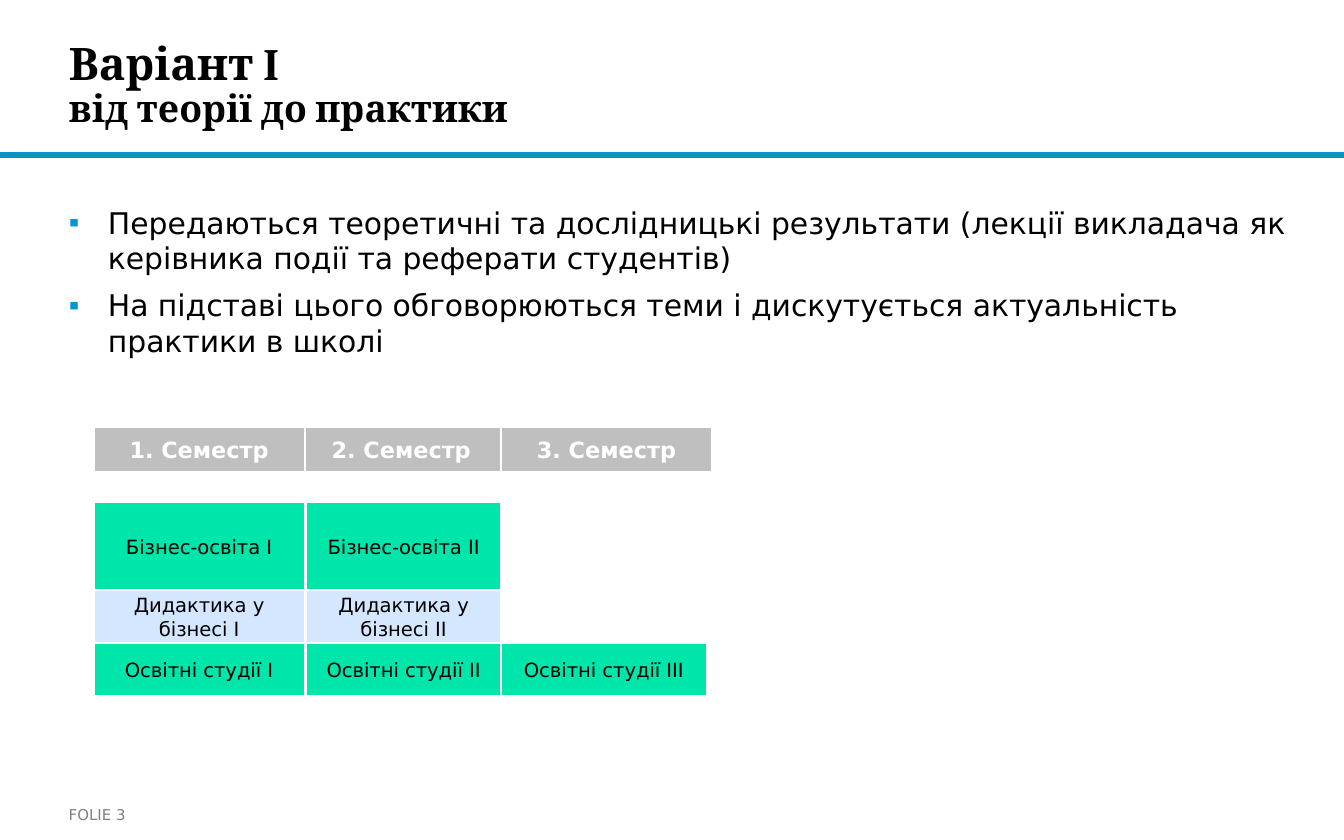
from lxml.etree import SubElement as Sub
from pptx import Presentation
from pptx.dml.color import RGBColor
from pptx.enum.shapes import MSO_SHAPE as Kind
from pptx.enum.text import MSO_ANCHOR as Anchor, MSO_AUTO_SIZE as Auto, PP_ALIGN as Align
from pptx.oxml.ns import qn
from pptx.util import Cm, Pt

TITLE = ["Варіант I", "від теорії до практики"]
POINTS = [
    "Передаються теоретичні та дослідницькі результати (лекції викладача як керівника події та реферати студентів)",
    "На підставі цього обговорюються теми і дискутується актуальність практики в школі",
]
FOOT = "FOLIE 3"
TERMS = ["1. Семестр", "2. Семестр", "3. Семестр"]
ROWS = [
    ("mint", 9.49, 1.68, 0.08, ["Бізнес-освіта I", "Бізнес-освіта II"]),
    ("pale", 11.16, 0.99, 0.25, ["Дидактика у бізнесі I", "Дидактика у бізнесі II"]),
    ("mint", 12.16, 0.99, 0.08, ["Освітні студії I", "Освітні студії II", "Освітні студії III"]),
]
COLS = [(1.77, 3.99), (5.79, 3.68), (9.47, 3.89)]
HEADS = [1.77, 5.59, 9.47]
ORDER = [1, 2, 0]

THEME = {
    "serif": "Cambria", "sans": "DejaVu Sans",
    "black": "000000", "white": "FFFFFF", "grey": "808080", "head": "BFBFBF",
    "mint": "00E6AA", "pale": "D4E7FF", "bar": "0C94B7", "blue": "0096D3",
    "title": 24, "sub": 20, "body": 16, "term": 12, "cell": 10.5, "foot": 8,
}


def tint(name):
    return RGBColor.from_string(THEME[name])


def style(para, size, color="black", face="sans", bold=False, align=Align.LEFT):
    para.alignment = align
    for run in para.runs:
        font = run.font
        font.name = THEME[face]
        font.size = Pt(THEME[size])
        font.bold = bold
        font.color.rgb = tint(color)


def frame(shape, text, side=0, edge=0.13, anchor=Anchor.MIDDLE):
    box = shape.text_frame
    box.text = text
    box.word_wrap = True
    box.auto_size = Auto.NONE
    box.vertical_anchor = anchor
    box.margin_left = box.margin_right = Cm(side)
    box.margin_top = box.margin_bottom = Cm(edge)
    return box.paragraphs


def place(shape, *area):
    shape.left, shape.top, shape.width, shape.height = map(Cm, area)


def block(slide, area, fill, line="white"):
    shape = slide.shapes.add_shape(Kind.RECTANGLE, *map(Cm, area))
    shape.shadow.inherit = False
    shape.fill.solid()
    shape.fill.fore_color.rgb = tint(fill)
    shape.line.color.rgb = tint(line)
    shape.line.width = Pt(1)
    return shape


def bullet(para):
    props = para._p.get_or_add_pPr()
    props.set("marL", str(Cm(0.74)))
    props.set("indent", str(-Cm(0.74)))
    Sub(Sub(props, qn("a:buClr")), qn("a:srgbClr"), val=THEME["blue"])
    Sub(props, qn("a:buChar"), char="▪")


def main():
    deck = Presentation()
    deck.slide_width, deck.slide_height = Cm(25.4), Cm(15.88)
    slide = deck.slides.add_slide(deck.slide_layouts[1])
    block(slide, (0, 2.9, 25.4, 0.08), "bar", "blue")

    title = slide.shapes.title
    place(title, 1.3, 0.38, 19, 2.51)
    for para, size in zip(frame(title, "\n".join(TITLE), edge=0), ("title", "sub")):
        para.line_spacing = 0.9
        style(para, size, face="serif", bold=True)

    body = slide.placeholders[1]
    place(body, 1.3, 3.73, 23.55, 10.69)
    for para in frame(body, "\n".join(POINTS), anchor=Anchor.TOP):
        bullet(para)
        para.space_before, para.space_after = Pt(0), Pt(6)
        style(para, "body")

    foot = slide.shapes.add_textbox(Cm(1.3), Cm(15.04), Cm(2.49), Cm(0.71))
    style(frame(foot, FOOT)[0], "foot", "grey")

    for i in ORDER:
        head = block(slide, (HEADS[i], 8.08, 3.99, 0.84), "head")
        style(frame(head, TERMS[i])[0], "term", "white", bold=True, align=Align.CENTER)

    for fill, top, high, side, names in ROWS:
        for name, (left, wide) in zip(names, COLS):
            cell = block(slide, (left, top, wide, high), fill)
            style(frame(cell, name, side)[0], "cell", align=Align.CENTER)

    deck.save("out.pptx")


if __name__ == "__main__":
    main()
